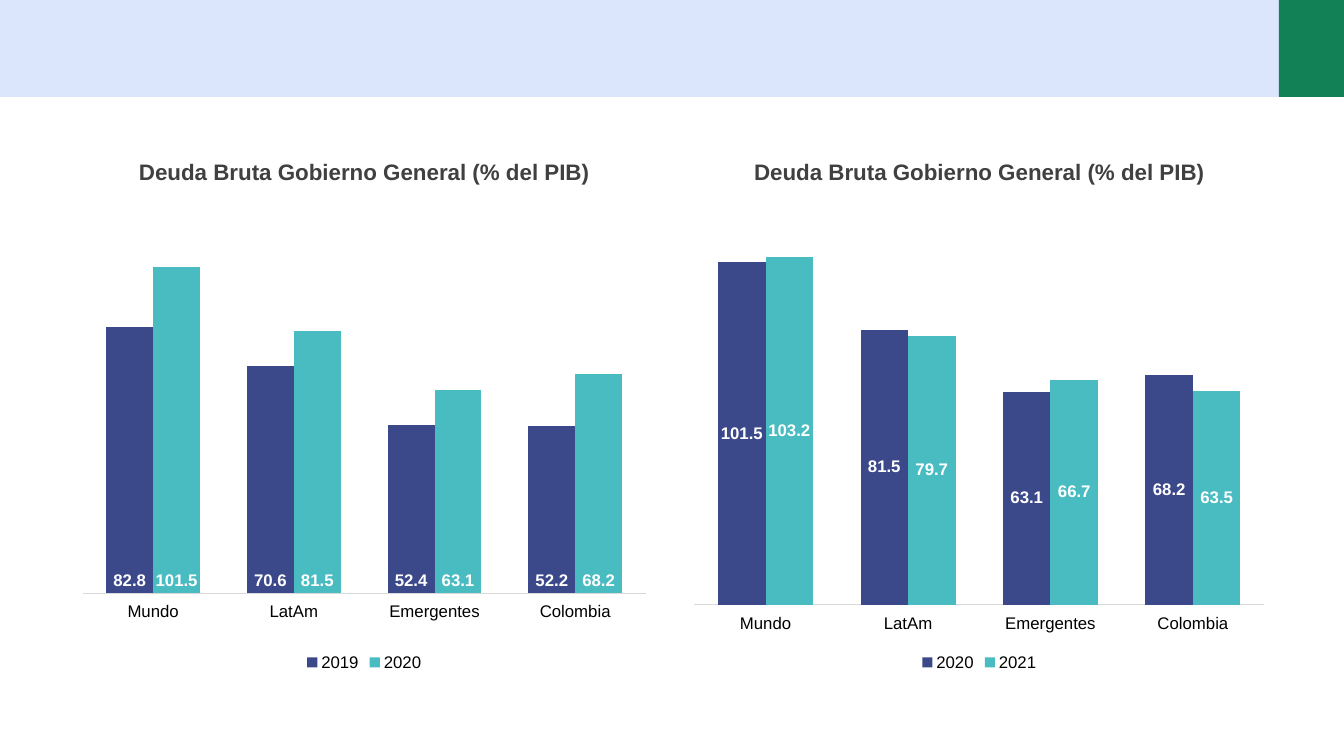
from lxml.etree import SubElement
from pptx import Presentation
from pptx.chart.data import CategoryChartData
from pptx.dml.color import RGBColor
from pptx.enum.chart import (XL_CHART_TYPE, XL_LABEL_POSITION, XL_LEGEND_POSITION,
                             XL_TICK_LABEL_POSITION, XL_TICK_MARK)
from pptx.enum.shapes import MSO_SHAPE
from pptx.enum.text import MSO_ANCHOR, MSO_AUTO_SIZE, PP_ALIGN
from pptx.oxml.ns import qn
from pptx.util import Cm, Pt

COLORS = {
    "band": "DBE6FC", "corner": "138156", "heading": "404040", "text": "000000",
    "axis": "D9D9D9", "label": "FFFFFF", "earlier": "3B488A", "later": "49BCC2",
}
FONT = "Arial"
REGIONS = ["Mundo", "LatAm", "Emergentes", "Colombia"]
DEBT_2020 = [101.5, 81.5, 63.1, 68.2]
HEADING = "Deuda Bruta Gobierno General (% del PIB)"
HEADING_HEIGHT = 1.78


def rgb(name):
    """Return the named palette colour."""
    return RGBColor.from_string(COLORS[name])


def add_header(slide, left, top, width, height):
    """Draw the pale band and the green block at its right end."""
    corner_width = 1.64
    band_width = width - corner_width
    for part_left, part_width, color in ((left, band_width, "band"),
                                         (left + band_width, corner_width, "corner")):
        block = slide.shapes.add_shape(MSO_SHAPE.RECTANGLE, Cm(part_left), Cm(top),
                                       Cm(part_width), Cm(height))
        block.shadow.inherit = False
        block.fill.solid()
        block.fill.fore_color.rgb = rgb(color)
        block.line.fill.background()


def fill_heading(heading, left, top, width, height):
    """Place the panel heading in its body placeholder."""
    heading.left, heading.top = Cm(left), Cm(top)
    heading.width, heading.height = Cm(width), Cm(height)
    frame = heading.text_frame
    frame.text = HEADING
    frame.word_wrap = True
    frame.auto_size = MSO_AUTO_SIZE.NONE
    frame.vertical_anchor = MSO_ANCHOR.BOTTOM
    paragraph = frame.paragraphs[0]
    paragraph.alignment = PP_ALIGN.CENTER
    paragraph.space_before = Pt(0)
    font = paragraph.runs[0].font
    font.name, font.size, font.bold = FONT, Pt(16), True
    font.color.rgb = rgb("heading")


def set_plot_box(chart, plot_box):
    """Fix the inner plot area as fractions of the chart."""
    plot_area = chart.plots[0]._element.getparent()
    for automatic in plot_area.findall(qn("c:layout")):
        plot_area.remove(automatic)
    layout = SubElement(plot_area, qn("c:layout"))
    plot_area.insert(0, layout)
    manual = SubElement(layout, qn("c:manualLayout"))
    settings = [("layoutTarget", "inner"), ("xMode", "edge"), ("yMode", "edge")]
    settings += zip("xywh", plot_box)
    for tag, value in settings:
        SubElement(manual, qn(f"c:{tag}")).set("val", str(value))


def style_axes(chart):
    """Show only the category names and a thin base line."""
    regions_axis, debt_axis = chart.category_axis, chart.value_axis
    for axis in (regions_axis, debt_axis):
        axis.major_tick_mark = axis.minor_tick_mark = XL_TICK_MARK.NONE
        axis.has_major_gridlines = False
    regions_axis.tick_label_position = XL_TICK_LABEL_POSITION.LOW
    regions_axis.format.line.color.rgb = rgb("axis")
    regions_axis.format.line.width = Pt(0.75)
    debt_axis.tick_label_position = XL_TICK_LABEL_POSITION.NONE
    debt_axis.format.line.fill.background()
    debt_axis.minimum_scale, debt_axis.maximum_scale = 0, 120


def add_debt_chart(slide, debt_by_year, label_position, plot_box, left, top, width, height):
    """Add a clustered column chart comparing two years."""
    debt = CategoryChartData(number_format="#,##0.0")
    debt.categories = REGIONS
    for year, values in debt_by_year.items():
        debt.add_series(year, values)
    chart = slide.shapes.add_chart(XL_CHART_TYPE.COLUMN_CLUSTERED, Cm(left), Cm(top),
                                   Cm(width), Cm(height), debt).chart
    chart.has_title = False
    chart.font.name, chart.font.size = FONT, Pt(12)
    chart.font.color.rgb = rgb("text")
    chart.has_legend = True
    chart.legend.position = XL_LEGEND_POSITION.BOTTOM
    chart.legend.include_in_layout = False
    style_axes(chart)
    set_plot_box(chart, plot_box)
    plot = chart.plots[0]
    plot.gap_width, plot.overlap = 100, 0
    plot.vary_by_categories = False
    for year, color in zip(plot.series, ("earlier", "later")):
        year.format.fill.solid()
        year.format.fill.fore_color.rgb = rgb(color)
        labels = year.data_labels
        labels.show_value = True
        labels.position = label_position
        labels.number_format, labels.number_format_is_linked = "#,##0.0", False
        labels.font.name, labels.font.size, labels.font.bold = FONT, Pt(12), True
        labels.font.color.rgb = rgb("label")


def add_panel(slide, heading, debt_by_year, label_position, plot_box,
              left, top, width, height):
    """Stack a heading and its chart in the given box."""
    fill_heading(heading, left, top, width, HEADING_HEIGHT)
    add_debt_chart(slide, debt_by_year, label_position, plot_box,
                   left, top + HEADING_HEIGHT, width, height - HEADING_HEIGHT)


def main():
    """Build the debt comparison slide."""
    presentation = Presentation()
    presentation.slide_width, presentation.slide_height = Cm(33.87), Cm(19.05)
    slide = presentation.slides.add_slide(presentation.slide_layouts.get_by_name("Comparison"))
    headings = {holder.placeholder_format.idx: holder for holder in slide.placeholders}
    for unused in (0, 2, 4):
        holder = headings[unused]._element
        holder.getparent().remove(holder)
    add_header(slide, 0, 0, 33.87, 2.44)
    add_panel(slide, headings[1], {"2019": [82.8, 70.6, 52.4, 52.2], "2020": DEBT_2020},
              XL_LABEL_POSITION.INSIDE_BASE, (0.026, 0.035, 0.948, 0.796),
              1.7, 3.02, 14.96, 14)
    add_panel(slide, headings[3], {"2020": DEBT_2020, "2021": [103.2, 79.7, 66.7, 63.5]},
              XL_LABEL_POSITION.CENTER, (0.02, 0.02, 0.96, 0.834),
              17.2, 3.02, 14.96, 14)
    presentation.save("out.pptx")


if __name__ == "__main__":
    main()
